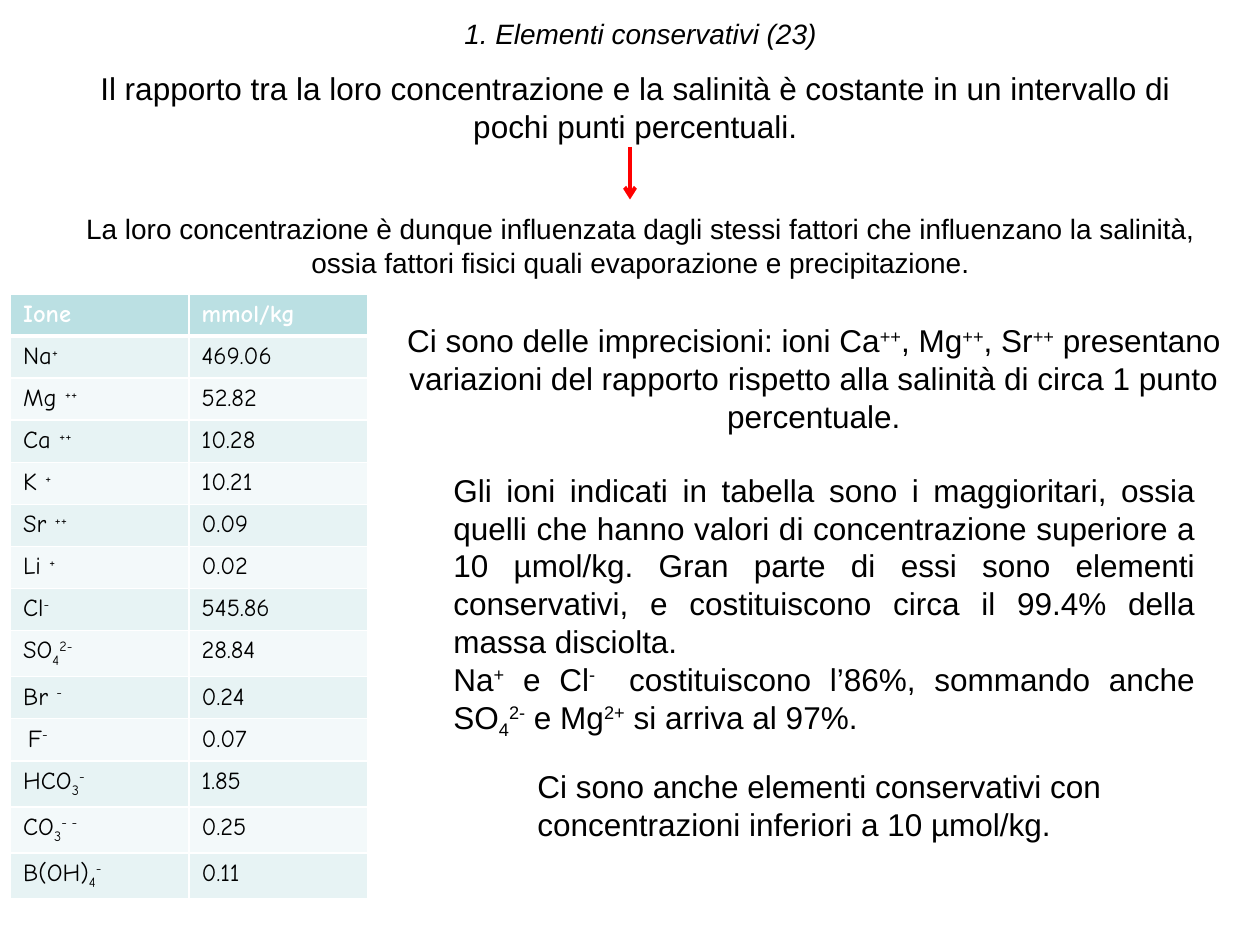
"""Build a slide on the conservative elements of seawater."""
import dataclasses
import typing

import pptx
import pptx.dml.color
import pptx.enum.shapes
import pptx.enum.text
import pptx.oxml
import pptx.oxml.ns
import pptx.util

Pt = pptx.util.Pt
Align = pptx.enum.text.PP_ALIGN
BLACK, WHITE, RED = "000000", "FFFFFF", "FF0000"
HEADER_FILL, BAND_FILLS = "BBE0E3", ("E7F3F4", "F3F9FA")
BASELINES = {"^": "30000", "_": "-25000"}
CELL_FORMAT = {"name": "Comic Neue", "size": Pt(14), "bold": False}
HEADER_FORMAT = CELL_FORMAT | {"bold": True}


@dataclasses.dataclass
class TextBlock:
    left: float
    top: float
    width: float
    height: float
    paragraphs: tuple[str, ...]
    size: float = 18
    alignment: typing.Any = Align.CENTER
    italic: bool = False


TITLE = TextBlock(60, 6, 612, 26.6, ("1. Elementi conservativi (23)",), 16, italic=True)
TEXT_BLOCKS = (
    TextBlock(30, 36, 666, 51, (
        "Il rapporto tra la loro concentrazione e la salinità è costante in un intervallo di "
        "pochi punti percentuali.",)),
    TextBlock(30, 117.5, 672, 46, (
        "La loro concentrazione è dunque influenzata dagli stessi fattori che influenzano la "
        "salinità, ossia fattori fisici quali evaporazione e precipitazione.",), 16),
    TextBlock(222, 180, 486, 73, (
        "Ci sono delle imprecisioni: ioni Ca|^++|, Mg|^++|, Sr|^++| presentano variazioni del "
        "rapporto rispetto alla salinità di circa 1 punto percentuale.",)),
    TextBlock(252, 265.5, 438, 160, (
        "Gli ioni indicati in tabella sono i maggioritari, ossia quelli che hanno valori di "
        "concentrazione superiore a 10 µmol/kg. Gran parte di essi sono elementi conservativi, "
        "e costituiscono circa il 99.4% della massa disciolta.",
        "Na|^+| e Cl|^- | costituiscono l’86%, sommando anche SO|_4|^2-| e Mg|^2+| si arriva "
        "al 97%."), alignment=Align.JUSTIFY),
    TextBlock(300, 435, 354, 51, (
        "Ci sono anche elementi conservativi con concentrazioni inferiori a 10 µmol/kg.",),
        alignment=Align.LEFT),
)
ION_ROWS = (
    ("Ione", "mmol/kg"),
    ("Na|^+", "469.06"),
    ("Mg |^++", "52.82"),
    ("Ca |^++", "10.28"),
    ("K |^+", "10.21"),
    ("Sr |^++", "0.09"),
    ("Li |^+", "0.02"),
    ("Cl|^-", "545.86"),
    ("SO|_4|^2-", "28.84"),
    ("Br |^-", "0.24"),
    ("^ |F|^-", "0.07"),
    ("HCO|_3|^-", "1.85"),
    ("CO|_3|^- -", "0.25"),
    ("B(OH)|_4|^-", "0.11"),
)


def rgb(color: str) -> pptx.dml.color.RGBColor:
    """Turn a hex string into a colour."""
    return pptx.dml.color.RGBColor.from_string(color)


def write_marked(paragraph: typing.Any, text: str, font_format: dict, color: str = BLACK) -> None:
    """Write pieces split at bars, raised after a caret and lowered after an underscore."""
    for piece in text.split("|"):
        baseline = BASELINES.get(piece[0])
        run = paragraph.add_run()
        run.text = piece[1:] if baseline else piece
        for name, value in font_format.items():
            setattr(run.font, name, value)
        run.font.color.rgb = rgb(color)
        if baseline:
            run.font._element.set("baseline", baseline)


def fill_text(shape: typing.Any, block: TextBlock) -> None:
    """Place a text shape and write its paragraphs."""
    for name in ("left", "top", "width", "height"):
        setattr(shape, name, Pt(getattr(block, name)))
    frame = shape.text_frame
    frame_format = {
        "word_wrap": True,
        "auto_size": pptx.enum.text.MSO_AUTO_SIZE.SHAPE_TO_FIT_TEXT,
        "vertical_anchor": pptx.enum.text.MSO_ANCHOR.TOP,
    }
    for name, value in frame_format.items():
        setattr(frame, name, value)
    font_format = {"name": "Arial", "size": Pt(block.size), "italic": block.italic}
    for index, text in enumerate(block.paragraphs):
        paragraph = frame.add_paragraph() if index else frame.paragraphs[0]
        paragraph.alignment = block.alignment
        write_marked(paragraph, text, font_format)


def add_arrow(slide: typing.Any, x: float, top: float, bottom: float) -> None:
    """Draw a red arrow pointing down."""
    arrow = slide.shapes.add_connector(
        pptx.enum.shapes.MSO_CONNECTOR.STRAIGHT, Pt(x), Pt(top), Pt(x), Pt(bottom))
    arrow.line.width = Pt(2.25)
    arrow.line.color.rgb = rgb(RED)
    line = arrow.line._get_or_add_ln()
    line.append(pptx.oxml.parse_xml(
        f'<a:tailEnd {pptx.oxml.ns.nsdecls("a")} type="arrow"/>'))
    line.addnext(pptx.oxml.parse_xml(f'<a:effectLst {pptx.oxml.ns.nsdecls("a")}/>'))


def add_borders(cell: typing.Any, row_index: int) -> None:
    """Give a cell white borders, thicker under the header."""
    widths = {"L": 1, "R": 1, "T": 3 if row_index == 1 else 1, "B": 3 if row_index == 0 else 1}
    properties = cell._tc.get_or_add_tcPr()
    for side, width in widths.items():
        properties.append(pptx.oxml.parse_xml(
            f'<a:ln{side} {pptx.oxml.ns.nsdecls("a")} w="{Pt(width)}">'
            f'<a:solidFill><a:srgbClr val="{WHITE}"/></a:solidFill></a:ln{side}>'))


def add_ion_table(slide: typing.Any) -> None:
    """Draw the table of ion concentrations."""
    row_height, column_width = 21.6, 102
    table = slide.shapes.add_table(
        len(ION_ROWS), 2, Pt(6), Pt(168), Pt(2 * column_width),
        Pt(row_height * len(ION_ROWS))).table
    for row_index, texts in enumerate(ION_ROWS):
        is_header = row_index == 0
        fill = HEADER_FILL if is_header else BAND_FILLS[(row_index - 1) % 2]
        for column_index, text in enumerate(texts):
            cell = table.cell(row_index, column_index)
            add_borders(cell, row_index)
            cell.fill.solid()
            cell.fill.fore_color.rgb = rgb(fill)
            write_marked(cell.text_frame.paragraphs[0], text,
                         HEADER_FORMAT if is_header else CELL_FORMAT,
                         WHITE if is_header else BLACK)


def main() -> None:
    """Build and save the presentation."""
    presentation = pptx.Presentation()
    presentation.slide_width, presentation.slide_height = Pt(720), Pt(540)
    slide = presentation.slides.add_slide(presentation.slide_layouts.get_by_name("Title Only"))
    fill_text(slide.shapes.title, TITLE)
    for block in TEXT_BLOCKS:
        fill_text(slide.shapes.add_textbox(0, 0, 0, 0), block)
    add_arrow(slide, 360, 84, 114)
    add_ion_table(slide)
    presentation.save("out.pptx")


if __name__ == "__main__":
    main()
